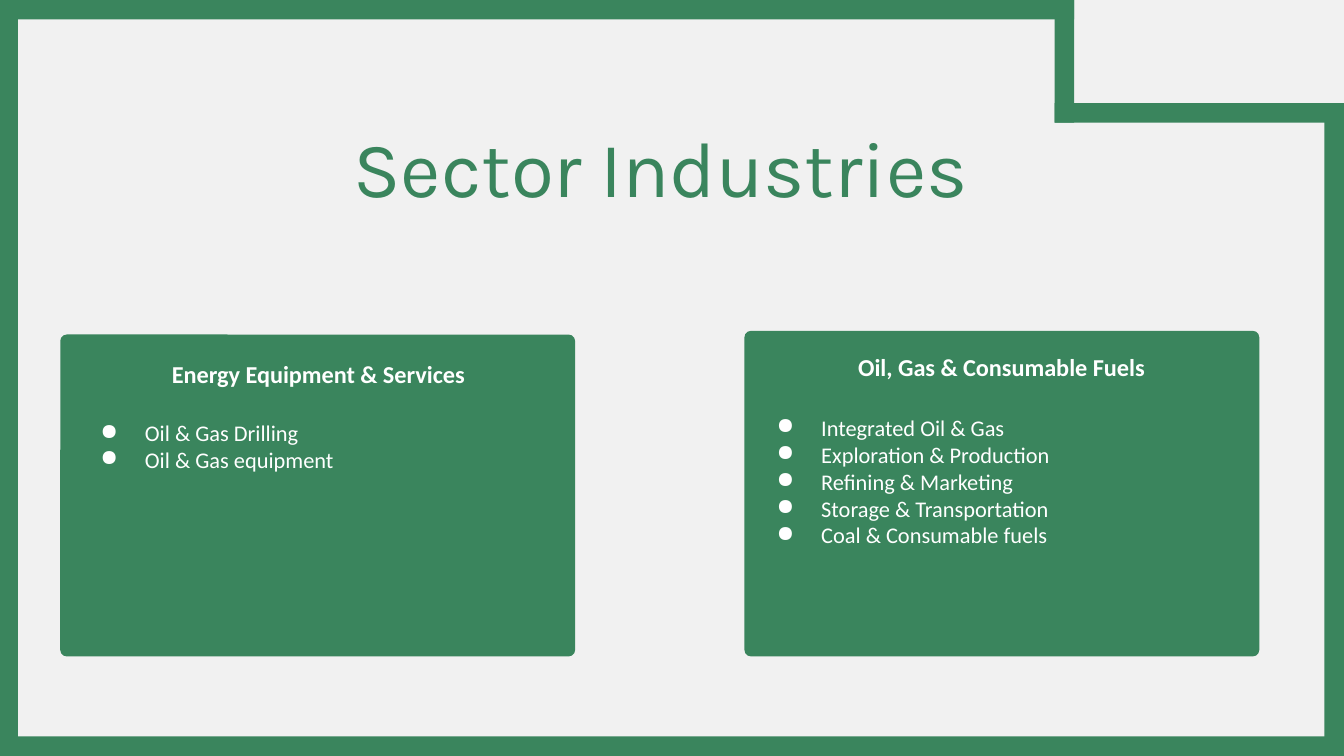
from lxml import etree
from pptx import Presentation
from pptx.dml.color import RGBColor
from pptx.enum import shapes, text
from pptx.oxml import ns
from pptx.util import Cm, Pt

GREEN, WHITE, PALE = "3A855D", "FFFFFF", "F1F1F1"
WIDE, HIGH, BAR = 25.4, 14.28, 0.37


def paint(fill, color):
    fill.solid()
    fill.fore_color.rgb = RGBColor.from_string(color)


def style(font, name, size, color, bold=False):
    font.name, font.size, font.bold = name, Pt(size), bold
    paint(font.fill, color)


deck = Presentation()
deck.slide_width, deck.slide_height = Cm(WIDE), Cm(HIGH)
slide = deck.slides.add_slide(deck.slide_layouts[5])
paint(slide.background.fill, PALE)

# Title
title = slide.shapes.title
title.left, title.top, title.width, title.height = Cm(6.68), Cm(2.36), Cm(12.98), Cm(1.73)
frame = title.text_frame
frame.text = "Sector Industries"
frame.margin_left = frame.margin_top = frame.margin_right = frame.margin_bottom = 0
frame.vertical_anchor = text.MSO_ANCHOR.TOP
frame.auto_size = text.MSO_AUTO_SIZE.NONE
para = frame.paragraphs[0]
para.alignment = text.PP_ALIGN.LEFT
para.line_spacing = 0.96
style(para.runs[0].font, "Karla", 42, GREEN)

# Cards: left, top, heading (left, top, height), list (left, top), words
cards = [
    (1.14, 6.32, (2.84, 5.84, 2.41), (1.22, 7.67), "Energy Equipment & Services",
     ["Oil & Gas Drilling", "Oil & Gas equipment"]),
    (14.07, 6.25, (15.75, 6.43, 0.95), (14.0, 7.57), "Oil, Gas & Consumable Fuels",
     ["Integrated Oil & Gas", "Exploration & Production", "Refining & Marketing",
      "Storage & Transportation", "Coal & Consumable fuels"]),
]
for left, top, head, spot, name, items in cards:
    card = slide.shapes.add_shape(shapes.MSO_SHAPE.ROUNDED_RECTANGLE,
                                  Cm(left), Cm(top), Cm(9.73), Cm(12.4 - top))
    card.adjustments[0] = 0.02
    card.shadow.inherit = False
    paint(card.fill, GREEN)
    card.line.fill.background()

    x, y, tall = head
    frame = slide.shapes.add_textbox(Cm(x), Cm(y), Cm(6.35), Cm(tall)).text_frame
    frame.word_wrap = True
    frame.vertical_anchor = text.MSO_ANCHOR.MIDDLE
    frame.margin_left = frame.margin_top = frame.margin_right = frame.margin_bottom = Cm(0.08)
    frame.text = name
    para = frame.paragraphs[0]
    para.alignment = text.PP_ALIGN.CENTER
    para.line_spacing = 1.07
    style(para.runs[0].font, "Calibri", 13, WHITE, True)

    x, y = spot
    frame = slide.shapes.add_textbox(Cm(x), Cm(y), Cm(6.27), Cm(3.89)).text_frame
    frame.word_wrap = True
    frame.margin_left = frame.margin_top = frame.margin_right = frame.margin_bottom = Cm(0.25)
    frame.text = "\n".join(items)
    for para in frame.paragraphs:
        props = para._p.get_or_add_pPr()
        props.set("marL", str(Cm(1.27)))
        props.set("indent", str(Cm(-0.84)))
        tint = etree.SubElement(props, ns.qn("a:buClr"))
        etree.SubElement(tint, ns.qn("a:srgbClr"), val=WHITE)
        etree.SubElement(props, ns.qn("a:buChar"), char="●")
        style(para.runs[0].font, "Calibri", 12, WHITE)

# Border, stepped in at the top right corner
notch, step = 19.93, 1.95
bars = [
    (0, 0, 0.34, HIGH),
    (0, HIGH - BAR, WIDE, BAR),
    (WIDE - BAR, step, BAR, HIGH - step),
    (notch, 0, BAR, step + BAR),
    (notch, step, WIDE - notch, BAR),
    (0, 0, notch + BAR, BAR),
]
for box in bars:
    bar = slide.shapes.add_shape(shapes.MSO_SHAPE.RECTANGLE, *map(Cm, box))
    bar.shadow.inherit = False
    paint(bar.fill, GREEN)
    bar.line.fill.background()

deck.save("out.pptx")
